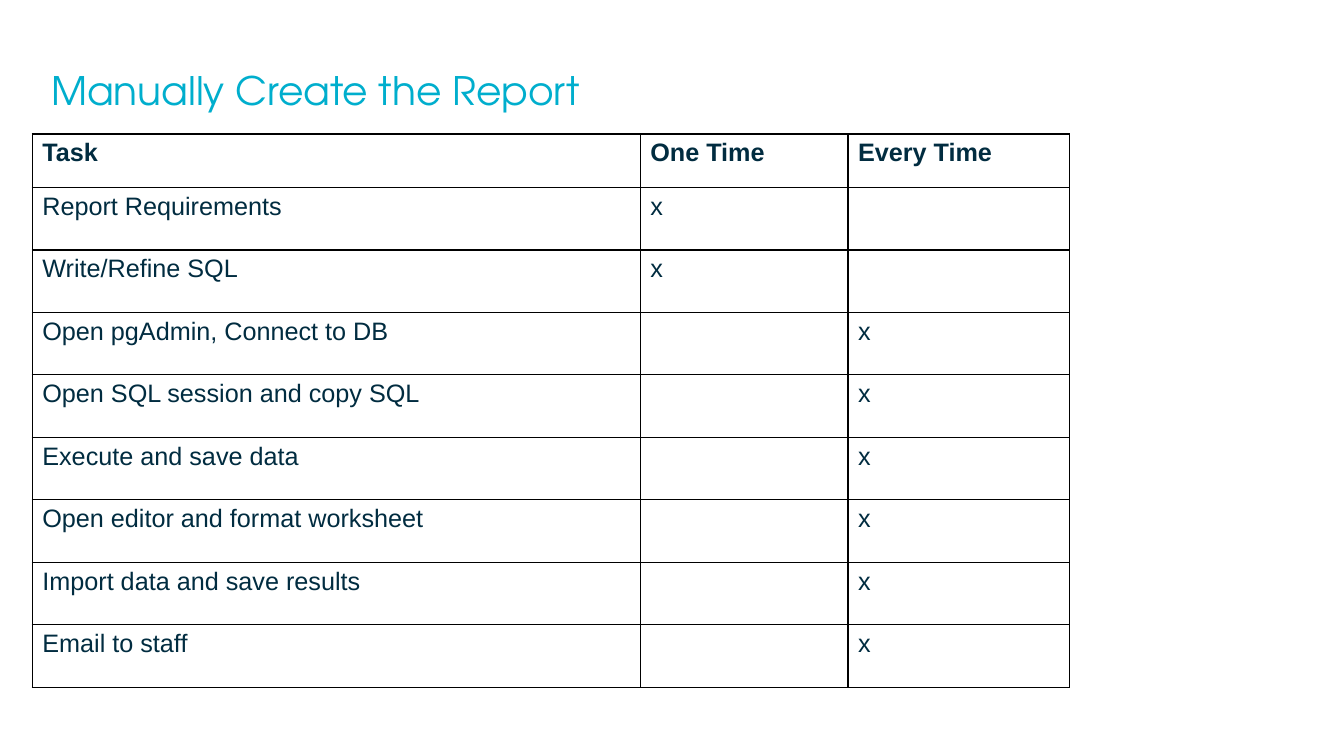
from dataclasses import dataclass

from lxml import etree
from pptx import Presentation
from pptx import util as u
from pptx.dml.color import RGBColor
from pptx.enum import text
from pptx.oxml import ns


@dataclass(frozen=True)
class Theme:
    title_font: str = "TeX Gyre Adventor"
    body_font: str = "Arial"
    title_color: str = "00AECD"
    body_color: str = "012C40"
    border_color: str = "000000"
    background: str = "FFFFFF"
    title_size: int = 28
    body_size: int = 18
    border_width: float = 1


class SlideBuilder:
    def __init__(self, page, theme):
        self.page = page
        self.theme = theme
        fill = page.background.fill
        fill.solid()
        fill.fore_color.rgb = RGBColor.from_string(theme.background)

    def style(self, para, font, size, color, bold=False):
        for span in para.runs:
            span.font.name = font
            span.font.size = u.Pt(size)
            span.font.bold = bold
            span.font.color.rgb = RGBColor.from_string(color)

    def title(self, words, left, top, width, height):
        box = self.page.shapes.add_textbox(
            u.Inches(left), u.Inches(top), u.Inches(width), u.Inches(height))
        frame = box.text_frame
        frame.word_wrap = True
        frame.vertical_anchor = text.MSO_ANCHOR.MIDDLE
        frame.text = words
        para = frame.paragraphs[0]
        para.line_spacing = 0.9
        self.style(para, self.theme.title_font, self.theme.title_size, self.theme.title_color)

    def border(self, cell):
        properties = cell._tc.get_or_add_tcPr()
        for side in ("a:lnL", "a:lnR", "a:lnT", "a:lnB"):
            line = etree.SubElement(properties, ns.qn(side), w=str(u.Pt(self.theme.border_width)))
            fill = etree.SubElement(line, ns.qn("a:solidFill"))
            etree.SubElement(fill, ns.qn("a:srgbClr"), val=self.theme.border_color)

    def table(self, rows, left, top, widths, heights):
        frame = self.page.shapes.add_table(
            len(rows), len(widths), u.Inches(left), u.Inches(top),
            u.Inches(sum(widths)), u.Inches(sum(heights)))
        grid = frame.table
        grid.first_row = False
        grid.horz_banding = False
        for column, width in zip(grid.columns, widths):
            column.width = u.Inches(width)
        for row, height in zip(grid.rows, heights):
            row.height = u.Inches(height)
        for r, values in enumerate(rows):
            for c, value in enumerate(values):
                cell = grid.cell(r, c)
                self.border(cell)
                cell.fill.background()
                cell.text = value
                self.style(cell.text_frame.paragraphs[0], self.theme.body_font,
                           self.theme.body_size, self.theme.body_color, bold=r == 0)


def main():
    deck = Presentation()
    deck.slide_width = u.Inches(13.33)
    deck.slide_height = u.Inches(7.5)
    builder = SlideBuilder(deck.slides.add_slide(deck.slide_layouts[6]), Theme())

    # Heading
    builder.title("Manually Create the Report", 0.41, 0.55, 11.5, 0.74)

    # Task table: each task is done either once or every time
    one_time = ["Report Requirements", "Write/Refine SQL"]
    every_time = [
        "Open pgAdmin, Connect to DB",
        "Open SQL session and copy SQL",
        "Execute and save data",
        "Open editor and format worksheet",
        "Import data and save results",
        "Email to staff",
    ]
    rows = [("Task", "One Time", "Every Time")]
    rows += [(task, "x", "") for task in one_time]
    rows += [(task, "", "x") for task in every_time]
    heights = [0.53] + [0.62] * (len(rows) - 1)
    builder.table(rows, 0.32, 1.33, [6.03, 2.06, 2.2], heights)

    deck.save("out.pptx")


if __name__ == "__main__":
    main()
